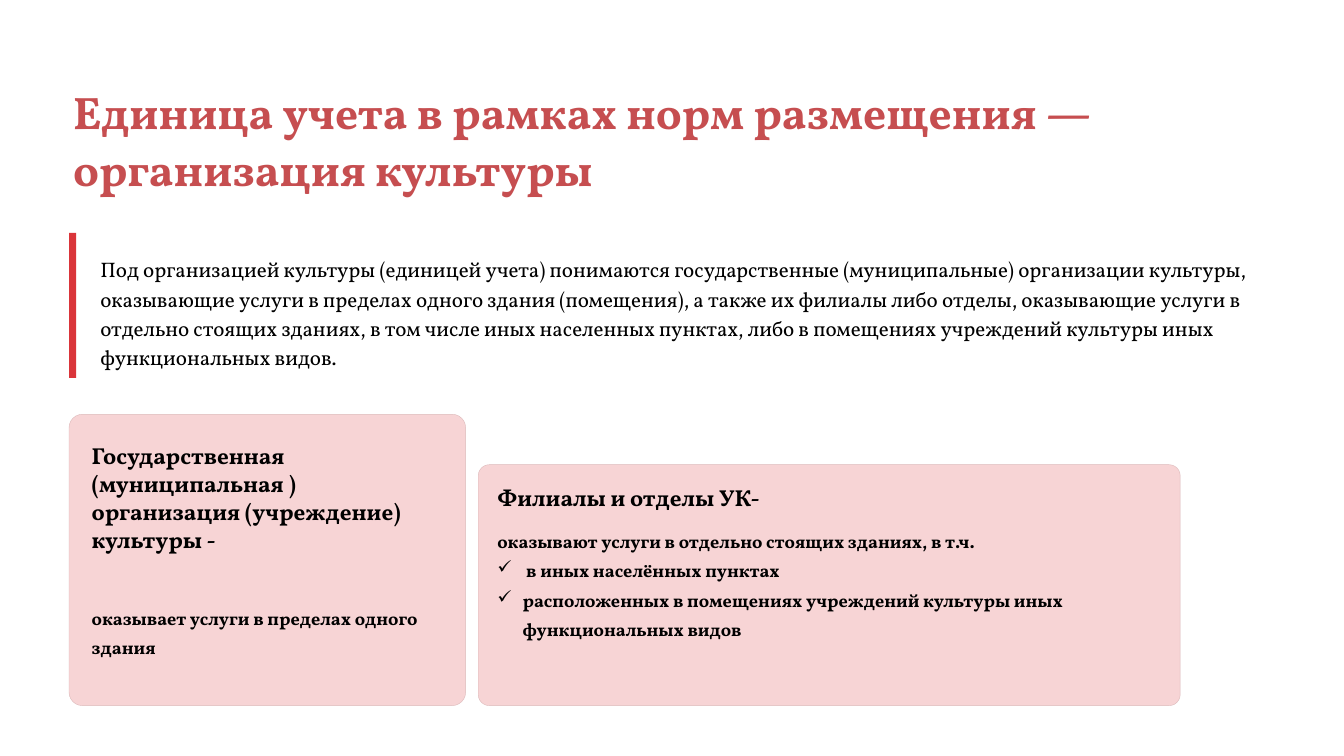
from lxml import etree
from pptx import Presentation
from pptx import util as u
from pptx.dml.color import RGBColor
from pptx.enum import shapes
from pptx.oxml.ns import qn

PX = 9144
FONT = "Vollkorn"
RED, ACCENT, PINK, EDGE, BLACK = "C64E50", "DA353A", "F7D4D5", "DDBABB", "000000"
CARD_BOTTOM = 1400
BULLET_INDENT = 50

TITLE = "Единица учета в рамках норм размещения — организация культуры"
DEFINITION = (
    "Под организацией культуры (единицей учета) понимаются государственные "
    "(муниципальные) организации культуры, оказывающие услуги в пределах одного "
    "здания (помещения), а также их филиалы либо отделы, оказывающие услуги в "
    "отдельно стоящих зданиях, в том числе иных населенных пунктах, либо в "
    "помещениях учреждений культуры иных функциональных видов."
)
CARDS = [
    {
        "card": (137, 822, 787),
        "heading": "Государственная (муниципальная ) организация (учреждение) культуры -",
        "heading_box": (182, 876, 693, 196),
        "details": ["оказывает услуги в пределах одного здания"],
        "details_box": (182, 1191, 717, 124),
        "bullets": [],
    },
    {
        "card": (949, 922, 1393),
        "heading": "Филиалы и отделы УК-",
        "heading_box": (987, 959, 1268, 57),
        "details": ["оказывают услуги в отдельно стоящих зданиях, в т.ч."],
        "details_box": (987, 1038, 1268, 324),
        "bullets": [
            " в иных населённых пунктах",
            "расположенных в помещениях учреждений культуры иных функциональных видов",
        ],
    },
]


def color(value):
    return RGBColor.from_string(value)


def scaled(box):
    return [length * PX for length in box]


def add_text(slide, lines, box, size, spacing, tint=BLACK, bold=False, bullets=()):
    frame = slide.shapes.add_textbox(*scaled(box)).text_frame
    frame.word_wrap = True
    frame.margin_left = frame.margin_right = frame.margin_top = frame.margin_bottom = 0
    entries = [(line, False) for line in lines] + [(line, True) for line in bullets]
    for index, (line, bulleted) in enumerate(entries):
        paragraph = frame.add_paragraph() if index else frame.paragraphs[0]
        if bulleted:
            properties = paragraph._p.get_or_add_pPr()
            properties.set("marL", str(BULLET_INDENT * PX))
            properties.set("indent", str(-BULLET_INDENT * PX))
            etree.SubElement(properties, qn("a:buChar")).set("char", "✓")
        paragraph.line_spacing = u.Pt(spacing)
        run = paragraph.add_run()
        run.text = line
        run.font.name = FONT
        run.font.size = u.Pt(size)
        run.font.bold = bold
        run.font.color.rgb = color(tint)


def add_block(slide, kind, box, fill, edge=None):
    block = slide.shapes.add_shape(kind, *scaled(box))
    block.shadow.inherit = False
    block.fill.solid()
    block.fill.fore_color.rgb = color(fill)
    if edge:
        block.line.color.rgb = color(edge)
        block.line.width = u.Pt(0.6)
    else:
        block.line.fill.background()
    return block


def main():
    deck = Presentation()
    deck.slide_width, deck.slide_height = scaled((2667, 1500))
    slide = deck.slides.add_slide(deck.slide_layouts[6])

    add_text(slide, [TITLE], (145, 163, 2377, 226), 65, 80.8, tint=RED, bold=True)
    add_text(slide, [DEFINITION], (199, 502, 2323, 174), 30, 41.7)
    add_block(slide, shapes.MSO_SHAPE.RECTANGLE, (137, 462, 14, 288), ACCENT)

    for item in CARDS:
        left, top, width = item["card"]
        card_box = (left, top, width, CARD_BOTTOM - top)
        card = add_block(slide, shapes.MSO_SHAPE.ROUNDED_RECTANGLE, card_box, PINK, EDGE)
        card.adjustments[0] = 0.046
        add_text(slide, [item["heading"]], item["heading_box"], 33, 40, bold=True)
        add_text(slide, item["details"], item["details_box"], 26, 41.7,
                 bold=True, bullets=item["bullets"])

    deck.save("out.pptx")


if __name__ == "__main__":
    main()
